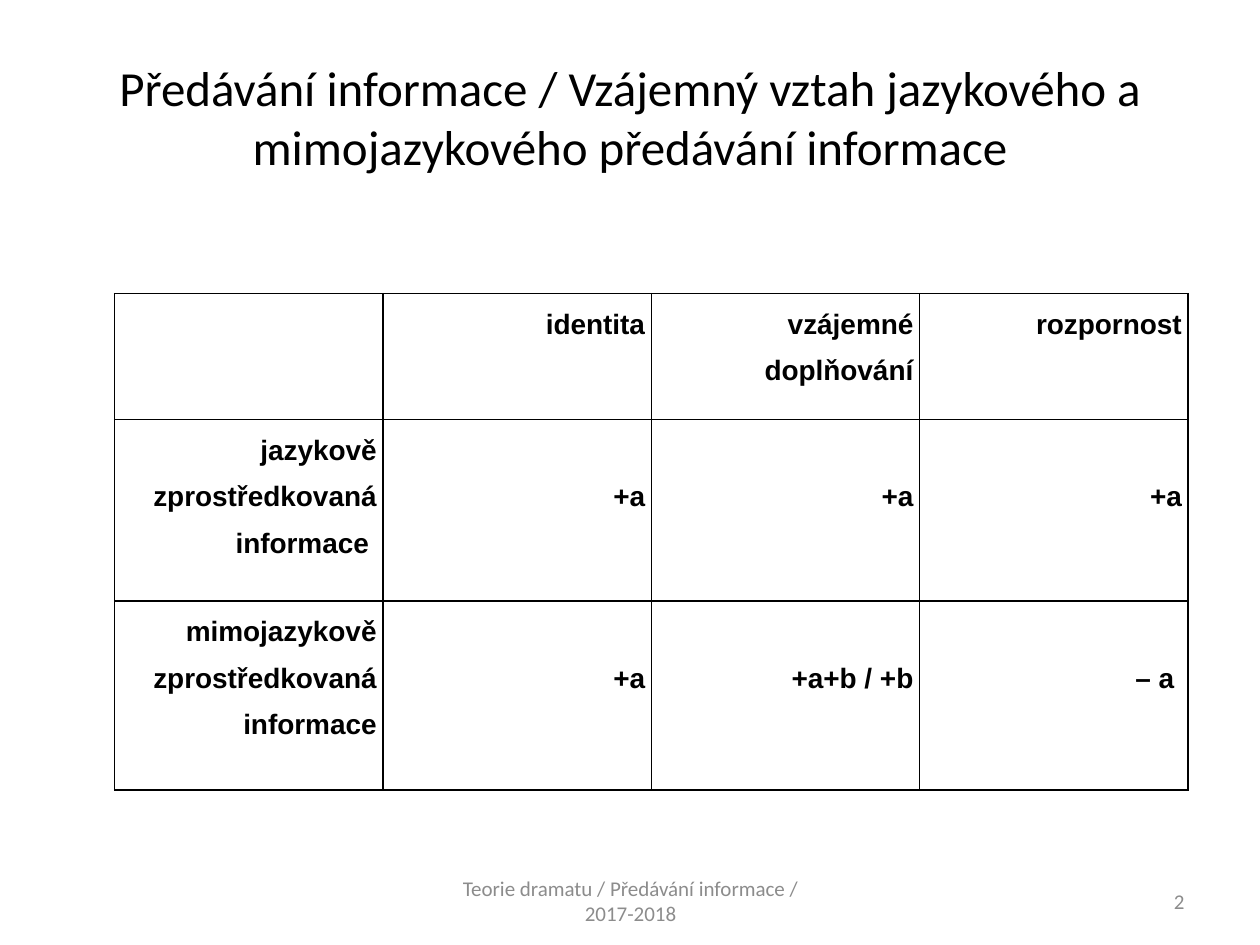
from lxml import etree
from pptx import Presentation, util as u
from pptx.dml import color
from pptx.enum import text
from pptx.oxml import ns

W, H = 10, 7.5
RIGHT, CENTER = text.PP_ALIGN.RIGHT, text.PP_ALIGN.CENTER

deck = Presentation()
deck.slide_width, deck.slide_height = u.Inches(W), u.Inches(H)
slide = deck.slides.add_slide(deck.slide_layouts[6])


def write(frame, words, align, size, font, ink, bold=False):
    paragraph = frame.paragraphs[0]
    paragraph.alignment = align
    run = paragraph.add_run()
    run.text = words
    run.font.size, run.font.name, run.font.bold = u.Pt(size), font, bold
    run.font.color.rgb = color.RGBColor.from_string(ink)
    return paragraph


def add_border(cell, side, ink):
    line = etree.SubElement(cell._tc.get_or_add_tcPr(), ns.qn(f"a:{side}"), w=str(u.Pt(1)))
    fill = etree.SubElement(line, ns.qn("a:solidFill"))
    etree.SubElement(fill, ns.qn("a:srgbClr"), val=ink)


# Title, footer and slide number
for left, top, width, height, words, align, size, ink in (
    (0.05, 0.04, 0.9, 1.25 / H, "Předávání informace / Vzájemný vztah jazykového a "
     "mimojazykového předávání informace", CENTER, 28, "000000"),
    (0.342, 6.95 / H, 0.317, 0.4 / H, "Teorie dramatu / Předávání informace / 2017-2018",
     CENTER, 12, "8C8C8C"),
    (0.717, 6.95 / H, 0.233, 0.4 / H, "2", RIGHT, 12, "8C8C8C"),
):
    frame = slide.shapes.add_textbox(u.Inches(left * W), u.Inches(top * H),
                                     u.Inches(width * W), u.Inches(height * H)).text_frame
    frame.word_wrap = True
    frame.vertical_anchor = text.MSO_ANCHOR.MIDDLE
    write(frame, words, align, size, "Calibri", ink)

# Table: relations of verbal and nonverbal information
relations = (
    ("", "identita", "vzájemné doplňování", "rozpornost"),
    ("jazykově zprostředkovaná informace ", "+a", "+a", "+a"),
    ("mimojazykově zprostředkovaná informace", "+a", "+a+b / +b", "– a "),
)
row_heights = (1, 1.44, 1.5)
column_width = 2.13
line_height = 0.37
table = slide.shapes.add_table(3, 4, u.Inches(0.91), u.Inches(2.33),
                               u.Inches(4 * column_width), u.Inches(sum(row_heights))).table
table.first_row = table.horz_banding = False
for column in table.columns:
    column.width = u.Inches(column_width)

for r, (row_words, row_height) in enumerate(zip(relations, row_heights)):
    table.rows[r].height = u.Inches(row_height)
    for c, words in enumerate(row_words):
        cell = table.cell(r, c)
        cell.margin_left = cell.margin_right = u.Inches(0.05)
        # Values sit one line lower than the row headings
        cell.margin_top = u.Inches(line_height if r and c else 0)
        cell.margin_bottom = 0
        for side in ("lnL", "lnR", "lnT", "lnB"):
            add_border(cell, side, "000000")
        cell.fill.background()
        if words:
            paragraph = write(cell.text_frame, words, RIGHT, 16, "Arial", "000000", True)
            paragraph.line_spacing = 1.5

deck.save("out.pptx")
